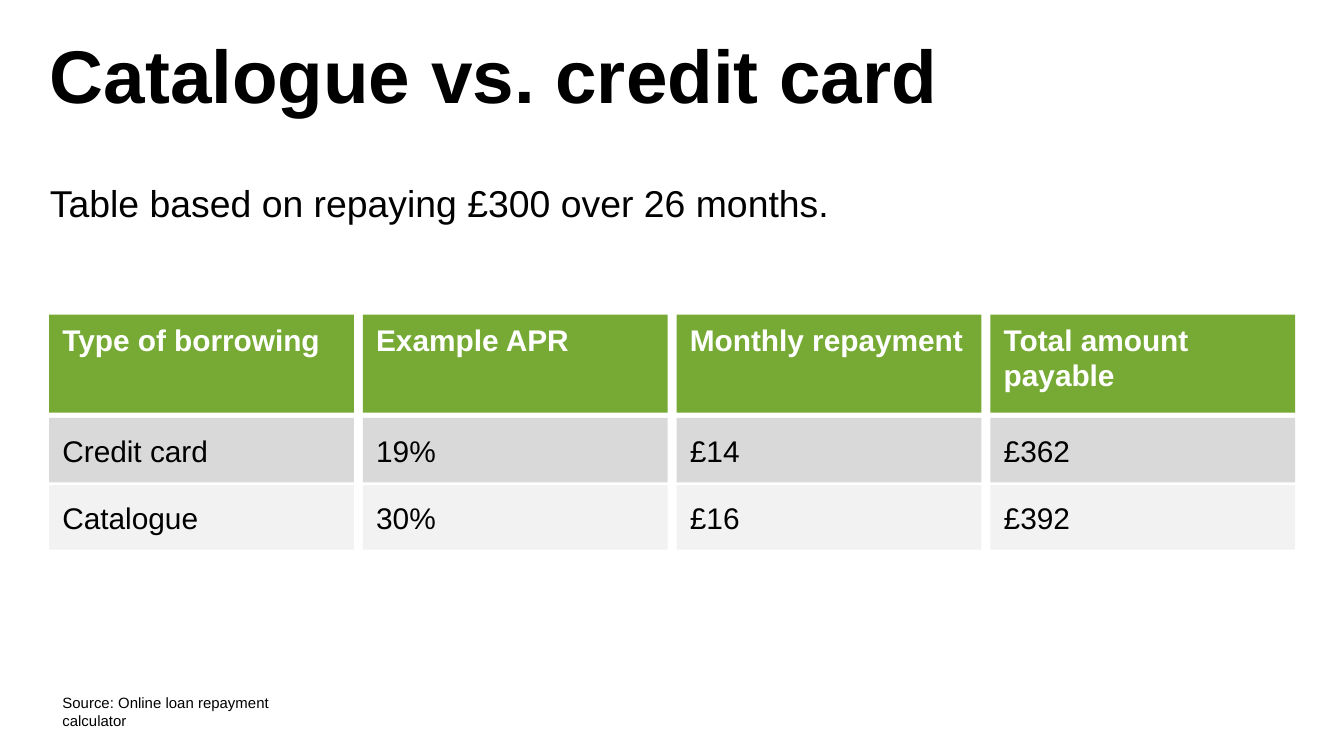
import pptx
import pptx.util
import pptx.dml.color
import pptx.enum.shapes
import pptx.enum.text
from pptx.util import Cm

COLORS = {"text": "000000", "header": "76AA35", "header_text": "FFFFFF",
          "dark_row": "D9D9D9", "light_row": "F2F2F2"}
FONT = "Arial"
ANCHOR = pptx.enum.text.MSO_ANCHOR

# Borrowing grid
ROWS = [
    ["Type of borrowing", "Example APR", "Monthly repayment", "Total amount payable"],
    ["Credit card", "19%", "£14", "£362"],
    ["Catalogue", "30%", "£16", "£392"],
]
ROW_STYLES = [  # top, height, fill, text colour
    (Cm(5.95), Cm(1.85), "header", "header_text"),
    (Cm(7.9), Cm(1.22), "dark_row", "text"),
    (Cm(9.17), Cm(1.22), "light_row", "text"),
]
GRID_LEFT, COL_WIDTH, COL_STEP = Cm(0.93), Cm(5.76), Cm(5.93)


def rgb(name):
    return pptx.dml.color.RGBColor.from_string(COLORS[name])


def write(sp, text, size, color="text", bold=False, before=0, anchor=ANCHOR.TOP):
    tf = sp.text_frame
    tf.vertical_anchor = anchor
    p = tf.paragraphs[0]
    p.alignment = pptx.enum.text.PP_ALIGN.LEFT
    p.space_before = pptx.util.Pt(before)
    r = p.add_run()
    r.text = text
    r.font.name = FONT
    r.font.size = pptx.util.Pt(size)
    r.font.bold = bold
    r.font.color.rgb = rgb(color)
    return p


def place(sp, left, top, width, height):
    sp.left, sp.top, sp.width, sp.height = left, top, width, height


def add_title(slide, text):
    sp = slide.shapes.title
    place(sp, Cm(0.69), Cm(0.61), Cm(23.77), Cm(3.78))
    write(sp, text, 40, bold=True).line_spacing = 0.9


def add_body(slide, text):
    sp = slide.placeholders[1]
    place(sp, Cm(0.69), Cm(3.28), Cm(16.94), Cm(1.55))
    p = write(sp, text, 20, before=6)
    # No bullet or hanging indent
    pPr = p._p.get_or_add_pPr()
    pPr.set("marL", "0")
    pPr.set("indent", "0")
    pPr.append(pptx.oxml.parse_xml(
        '<a:buNone xmlns:a="http://schemas.openxmlformats.org/drawingml/2006/main"/>'))


def add_cell(slide, row, col, text):
    top, height, fill, color = ROW_STYLES[row]
    sp = slide.shapes.add_shape(pptx.enum.shapes.MSO_SHAPE.RECTANGLE,
                                GRID_LEFT + col * COL_STEP, top, COL_WIDTH, height)
    sp.shadow.inherit = False
    sp.fill.solid()
    sp.fill.fore_color.rgb = rgb(fill)
    sp.line.fill.background()
    is_header = row == 0
    write(sp, text, 16, color, bold=is_header, before=6,
          anchor=ANCHOR.TOP if is_header else ANCHOR.MIDDLE)


def add_source(slide, text):
    sp = slide.shapes.add_textbox(Cm(0.93), Cm(12.98), Cm(5.69), Cm(0.6))
    sp.text_frame.word_wrap = False
    sp.text_frame.auto_size = pptx.enum.text.MSO_AUTO_SIZE.SHAPE_TO_FIT_TEXT
    write(sp, text, 8)


def main():
    prs = pptx.Presentation()
    prs.slide_width, prs.slide_height = Cm(25.4), Cm(14.29)
    slide = prs.slides.add_slide(prs.slide_layouts[1])

    add_title(slide, "Catalogue vs. credit card")
    add_body(slide, "Table based on repaying £300 over 26 months.")
    for row, texts in enumerate(ROWS):
        for col, text in enumerate(texts):
            add_cell(slide, row, col, text)
    add_source(slide, "Source: Online loan repayment calculator")

    prs.save("out.pptx")


if __name__ == "__main__":
    main()
